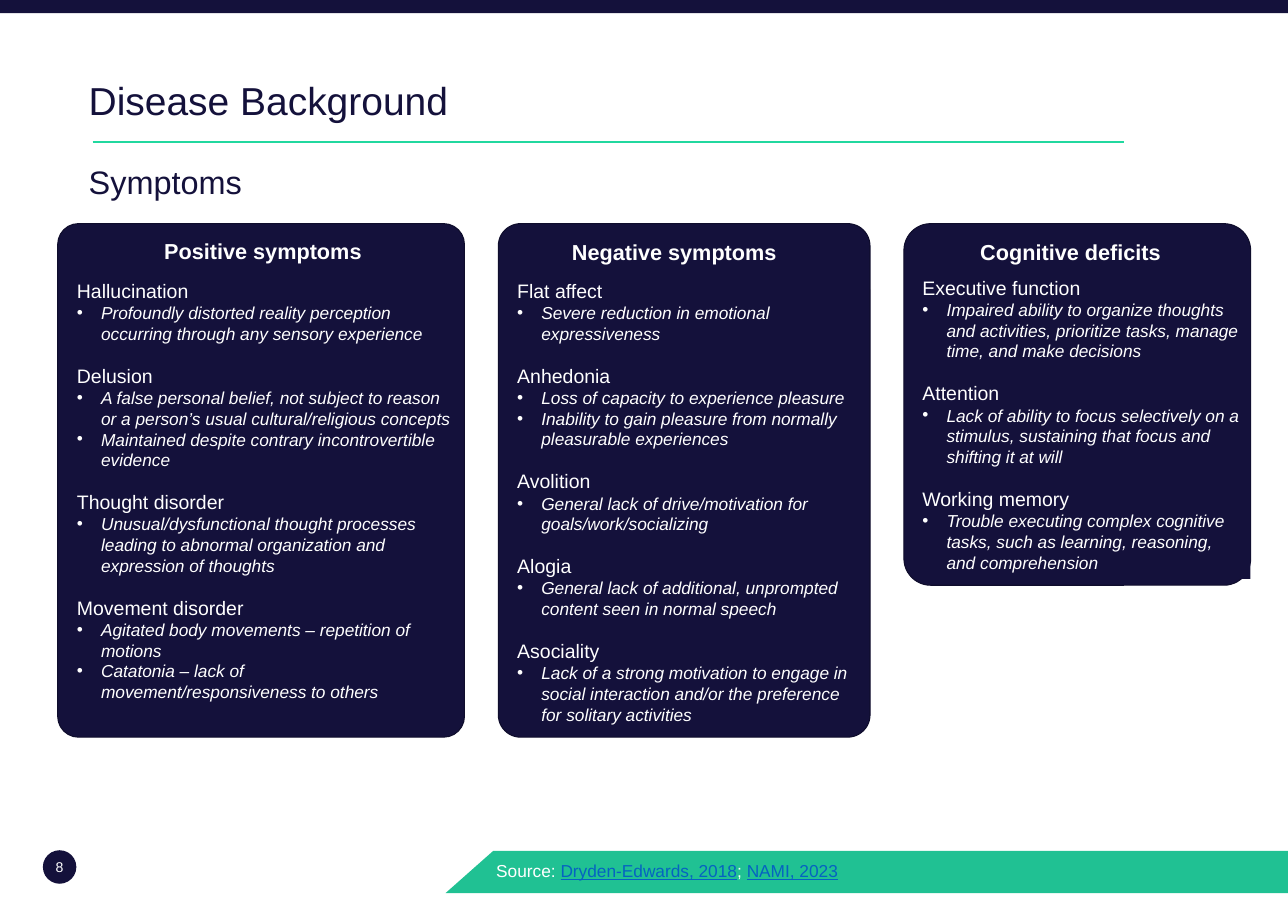
from lxml import etree
from pptx import Presentation, util as u
from pptx.dml.color import RGBColor
from pptx.enum import shapes, text
from pptx.oxml import ns

WIDTH, HEIGHT = u.Inches(16.53), u.Inches(11.69)
NAVY, NAVY_EDGE, GREEN, MINT = "14113B", "0F0D2C", "20C193", "21D89F"
WHITE, LINK = "FFFFFF", "0563C1"
FONT = "Arial"
INDENT = u.Inches(0.31)
CARD_LEFT, CARD_TOP, CARD_GAP = 4.48, 24.55, 2.63

CARDS = [
    {
        "title": "Positive symptoms", "size": (31.58, 56.37), "corner": 0.051,
        "heading": (5.81, 25.66, 29.22, 3.76), "body": (5.38, 30.2, 30.49, 48.07), "body_fill": None,
        "topics": [
            ("Hallucination", ["Profoundly distorted reality perception occurring through any sensory experience"]),
            ("Delusion", ["A false personal belief, not subject to reason or a person’s usual cultural/religious concepts",
                          "Maintained despite contrary incontrovertible evidence"]),
            ("Thought disorder", ["Unusual/dysfunctional thought processes leading to abnormal organization and expression of thoughts"]),
            ("Movement disorder", ["Agitated body movements – repetition of motions",
                                   "Catatonia – lack of movement/responsiveness to others"]),
        ],
    },
    {
        "title": "Negative symptoms", "size": (28.86, 56.37), "corner": 0.06,
        "heading": (39.56, 25.83, 25.59, 3.76), "body": (39.56, 30.2, 27.95, 50.64), "body_fill": None,
        "topics": [
            ("Flat affect", ["Severe reduction in emotional expressiveness"]),
            ("Anhedonia", ["Loss of capacity to experience pleasure",
                           "Inability to gain pleasure from normally pleasurable experiences"]),
            ("Avolition", ["General lack of drive/motivation for goals/work/socializing"]),
            ("Alogia", ["General lack of additional, unprompted content seen in normal speech"]),
            ("Asociality", ["Lack of a strong motivation to engage in social interaction and/or the preference for solitary activities"]),
        ],
    },
    {
        "title": "Cognitive deficits", "size": (26.92, 39.69), "corner": 0.077,
        "heading": (71.39, 25.83, 23.47, 3.76), "body": (71.02, 29.85, 26.07, 33.7), "body_fill": NAVY,
        "topics": [
            ("Executive function", ["Impaired ability to organize thoughts and activities, prioritize tasks, manage time, and make decisions"]),
            ("Attention", ["Lack of ability to focus selectively on a stimulus, sustaining that focus and shifting it at will"]),
            ("Working memory", ["Trouble executing complex cognitive tasks, such as learning, reasoning, and comprehension"]),
        ],
    },
]


def column(number):
    return round(WIDTH * number / 100)


def row(number):
    return round(HEIGHT * number / 100)


def place(left, top, width, height):
    return column(left), row(top), column(width), row(height)


def color(value):
    return RGBColor.from_string(value)


def style(font, size, value=WHITE, bold=False, italic=False):
    font.name, font.size, font.bold, font.italic = FONT, u.Pt(size), bold, italic
    font.color.rgb = color(value)


def paint(shape, fill, edge=None):
    shape.shadow.inherit = False
    shape.fill.solid()
    shape.fill.fore_color.rgb = color(fill)
    if edge:
        shape.line.color.rgb = color(edge)
        shape.line.width = u.Pt(1)
    else:
        shape.line.fill.background()


def add_panel(slide, kind, area, fill, edge=None):
    shape = slide.shapes.add_shape(kind, *place(*area))
    paint(shape, fill, edge)
    return shape


def add_text_box(slide, area):
    box = slide.shapes.add_textbox(*place(*area))
    box.text_frame.word_wrap = True
    return box


def add_label(slide, area, words, size, value=WHITE, bold=False, align=text.PP_ALIGN.LEFT):
    paragraph = add_text_box(slide, area).text_frame.paragraphs[0]
    paragraph.text = words
    paragraph.alignment = align
    style(paragraph.font, size, value, bold)
    return paragraph


def add_rule(slide, left, right, level):
    rule = slide.shapes.add_connector(
        shapes.MSO_CONNECTOR.STRAIGHT, column(left), row(level), column(right), row(level))
    rule.line.color.rgb = color(MINT)
    rule.line.width = u.Pt(1.75)
    etree.SubElement(rule.element.spPr, ns.qn("a:effectLst"))


def add_bullet(paragraph):
    properties = paragraph._p.get_or_add_pPr()
    properties.set("marL", str(INDENT))
    properties.set("indent", str(-INDENT))
    etree.SubElement(properties, ns.qn("a:buFont"), typeface=FONT)
    etree.SubElement(properties, ns.qn("a:buChar"), char="•")


def add_topics(slide, area, topics, fill):
    box = add_text_box(slide, area)
    if fill:
        box.fill.solid()
        box.fill.fore_color.rgb = color(fill)
    frame = box.text_frame
    for index, (topic, points) in enumerate(topics):
        paragraph = frame.add_paragraph() if index else frame.paragraphs[0]
        paragraph.text = topic
        if index:
            paragraph.space_before = u.Pt(18.4)
        style(paragraph.font, 18)
        for point in points:
            paragraph = frame.add_paragraph()
            paragraph.text = point
            add_bullet(paragraph)
            style(paragraph.font, 16, italic=True)


def add_card(slide, left, card):
    panel = add_panel(slide, shapes.MSO_SHAPE.ROUNDED_RECTANGLE,
                      (left, CARD_TOP, *card["size"]), NAVY, NAVY_EDGE)
    panel.adjustments[0] = card["corner"]
    add_label(slide, card["heading"], card["title"], 20, bold=True, align=text.PP_ALIGN.CENTER)
    add_topics(slide, card["body"], card["topics"], card["body_fill"])


def add_page_badge(slide, number):
    badge = add_panel(slide, shapes.MSO_SHAPE.OVAL, (3.33, 93.33, 2.6, 3.68), NAVY)
    frame = badge.text_frame
    frame.margin_left = frame.margin_right = frame.margin_top = frame.margin_bottom = 0
    frame.vertical_anchor = text.MSO_ANCHOR.MIDDLE
    paragraph = frame.paragraphs[0]
    paragraph.text = number
    paragraph.alignment = text.PP_ALIGN.CENTER
    style(paragraph.font, 13)


def add_source_band(slide):
    top, bottom = row(93.41), row(98.03)
    builder = slide.shapes.build_freeform(column(38.29), top)
    builder.add_line_segments([(WIDTH, top), (WIDTH, bottom), (column(34.6), bottom)])
    paint(builder.convert_to_shape(), GREEN)
    paragraph = add_label(slide, (37.93, 94.01, 62, 3.17), "Source: ", 16)
    for words, linked in [("Dryden-Edwards, 2018", True), ("; ", False), ("NAMI, 2023", True)]:
        run = paragraph.add_run()
        run.text = words
        if linked:
            run.font.underline = True
            run.font.color.rgb = color(LINK)


def main():
    presentation = Presentation()
    presentation.slide_width, presentation.slide_height = WIDTH, HEIGHT
    slide = presentation.slides.add_slide(presentation.slide_layouts[6])
    add_page_badge(slide, "8")
    add_source_band(slide)
    add_label(slide, (6.29, 7.96, 31, 6.07), "Disease Background", 36, NAVY)
    add_rule(slide, 7.2, 87.3, 15.57)
    add_panel(slide, shapes.MSO_SHAPE.RECTANGLE, (0, 0, 100, 1.45), NAVY)
    subtitle = add_label(slide, (6.29, 17.88, 86.69, 4.79), "Symptoms", 30, NAVY)
    subtitle.line_spacing = 0.9
    left = CARD_LEFT
    for card in CARDS:
        add_card(slide, left, card)
        left += card["size"][0] + CARD_GAP
    presentation.save("out.pptx")


if __name__ == "__main__":
    main()
